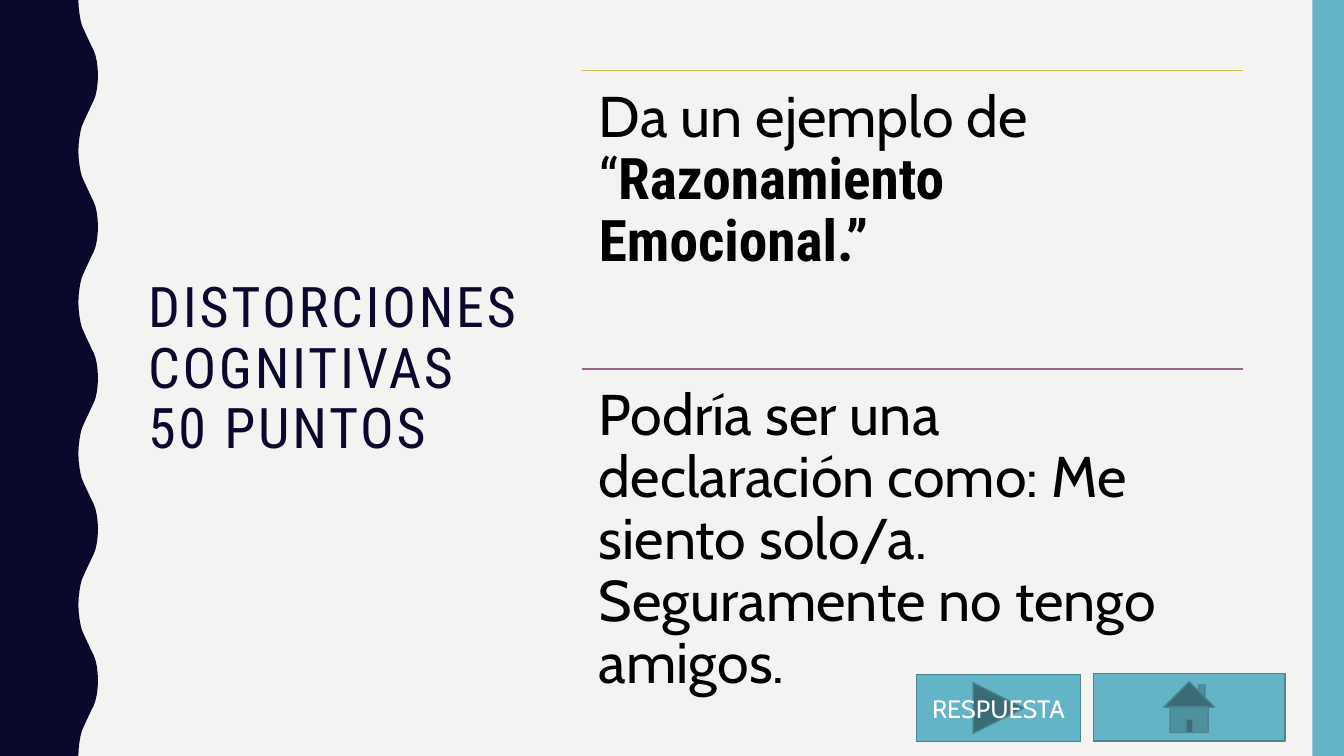
"""Build the quiz slide on cognitive distortions, with its answer and home buttons."""
from lxml.etree import SubElement
from pptx import Presentation
from pptx.dml.color import RGBColor
from pptx.enum.shapes import MSO_CONNECTOR, MSO_SHAPE as Shp
from pptx.enum.text import MSO_ANCHOR as Anchor, MSO_AUTO_SIZE, PP_ALIGN as Align
from pptx.oxml.ns import qn
from pptx.util import Pt

C = {"bg": "F3F3F2", "navy": "0B082E", "teal": "62B4C6", "edge": "498592",
     "gold": "D3BA55", "plum": "96648A", "black": "000000", "white": "FFFFFF"}
W, H = 960, 540
HEAD, BODY = "Roboto Condensed", "Cabin"


def write(p, text, size=41, font=BODY, color="black", bold=False, spacing=0):
    r = p.add_run()
    r.text = text
    r.font.size = Pt(size)
    r.font.name = font
    r.font.bold = bold
    r.font.color.rgb = RGBColor.from_string(C[color])
    if spacing:
        r.font._element.set("spc", str(spacing * 100))


def paint(sp, fill, edge=None):
    sp.shadow.inherit = False
    sp.fill.solid()
    sp.fill.fore_color.rgb = RGBColor.from_string(C[fill])
    if edge:
        sp.line.color.rgb = RGBColor.from_string(C[edge])
        sp.line.width = Pt(1)
    else:
        sp.line.fill.background()


prs = Presentation()
prs.slide_width, prs.slide_height = Pt(W), Pt(H)
s = prs.slides.add_slide(prs.slide_layouts[5])
s.background.fill.solid()
s.background.fill.fore_color.rgb = RGBColor.from_string(C["bg"])

period = 108
rise = [(56, 0), (56.2, 5), (56.8, 10), (57.6, 14.5), (58.5, 18), (59.8, 21),
        (61.2, 24), (62.6, 27), (64, 30), (65.4, 33), (66.9, 36), (68.2, 39.5),
        (69.2, 44), (69.8, 49), (70, 54)]
wave = rise + [(x, period - y) for x, y in reversed(rise[:-1])]
edge = [(x, y + period * i) for i in range(H // period) for x, y in wave]
fb = s.shapes.build_freeform(0, 0)
fb.add_line_segments([(Pt(x), Pt(y)) for x, y in edge + [(0, H)]], close=True)
paint(fb.convert_to_shape(), "navy")

bar = s.shapes.add_shape(Shp.RECTANGLE, Pt(937.5), 0, Pt(22.5), Pt(H))
paint(bar, "teal")

title = s.shapes.title
title.left, title.top, title.width, title.height = Pt(98.6), Pt(51), Pt(287.3), Pt(427)
tf = title.text_frame
tf.word_wrap = True
tf.auto_size = MSO_AUTO_SIZE.NONE
tf.vertical_anchor = Anchor.MIDDLE
p = tf.paragraphs[0]
p.alignment = Align.LEFT
p.line_spacing = 0.9
write(p, "DISTORCIONES COGNITIVAS", 40, HEAD, "navy", spacing=2)
p.add_line_break()
write(p, "50 PUNTOS", 40, HEAD, "navy", spacing=2)

left, top, width, height = 415.5, 50.5, 472.3, 213
question = [("Da un ejemplo de ", {}), ("“", {"font": HEAD}),
            ("Razonamiento Emocional.”", {"font": HEAD, "bold": True})]
answer = [("Podría ser una declaración como: Me siento solo/a. "
           "Seguramente no tengo amigos.", {})]
for i, (color, runs) in enumerate([("gold", question), ("plum", answer)]):
    y = Pt(top + i * height)
    rule = s.shapes.add_connector(MSO_CONNECTOR.STRAIGHT, Pt(left), y, Pt(left + width), y)
    rule.line.color.rgb = RGBColor.from_string(C[color])
    rule.line.width = Pt(1)
    SubElement(rule._element.spPr, qn("a:effectLst"))
    tf = s.shapes.add_textbox(Pt(left), y, Pt(width), Pt(height)).text_frame
    tf.word_wrap = True
    tf.margin_left = tf.margin_top = tf.margin_right = tf.margin_bottom = Pt(12.3)
    p = tf.paragraphs[0]
    p.line_spacing = 0.9
    for text, fmt in runs:
        write(p, text, **fmt)

for kind, x, y, w, label in [
        (Shp.ACTION_BUTTON_HOME, 781, 481, 136.8, ""),
        (Shp.ACTION_BUTTON_FORWARD_OR_NEXT, 654.5, 481.7, 117.4, "RESPUESTA")]:
    button = s.shapes.add_shape(kind, Pt(x), Pt(y), Pt(w), Pt(48.2))
    paint(button, "teal", "edge")
    if label:
        tf = button.text_frame
        tf.vertical_anchor = Anchor.MIDDLE
        p = tf.paragraphs[0]
        p.alignment = Align.CENTER
        write(p, label, 18, color="white")

prs.save("out.pptx")
